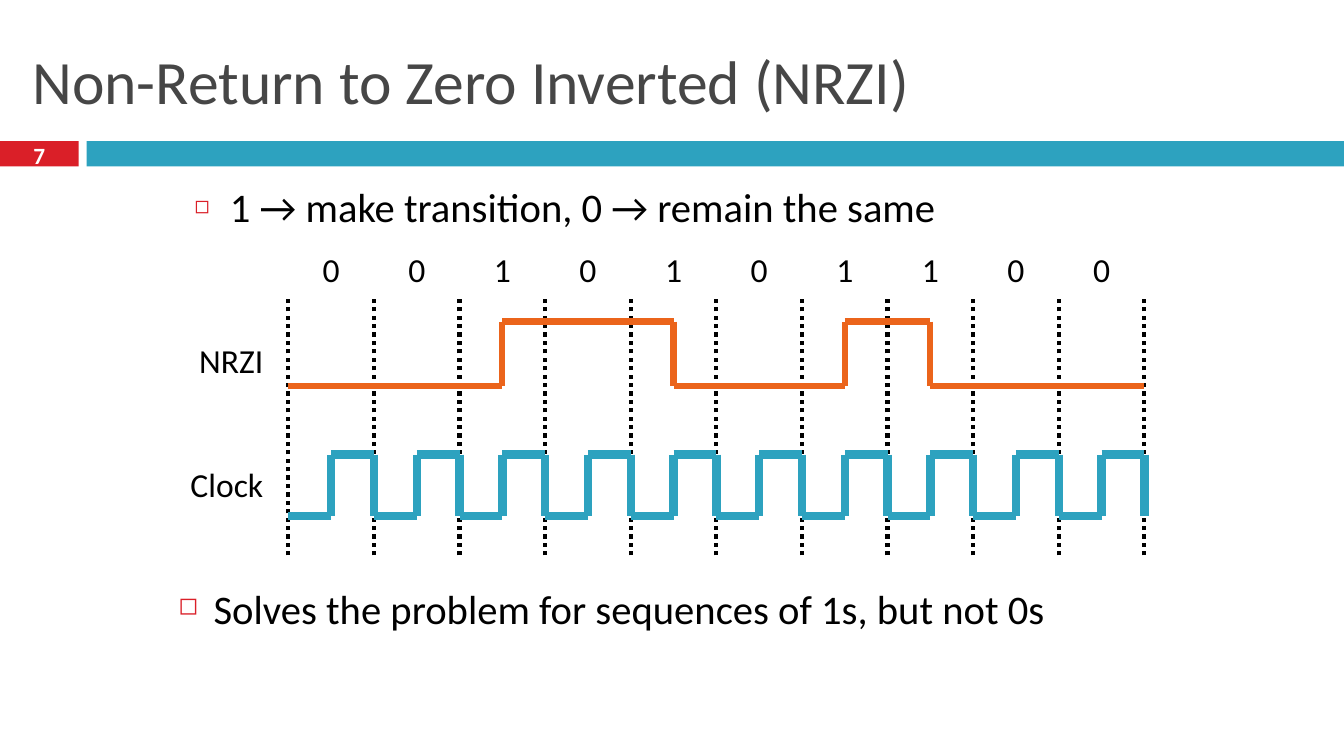
"""Build a slide that explains NRZI line coding with a timing diagram."""
from dataclasses import dataclass

from lxml import etree
from pptx import Presentation
from pptx.dml.color import RGBColor
from pptx.enum.dml import MSO_LINE
from pptx.enum.shapes import MSO_CONNECTOR, MSO_SHAPE
from pptx.enum.text import MSO_ANCHOR, MSO_AUTO_SIZE, PP_ALIGN
from pptx.oxml.ns import qn
from pptx.util import Inches, Pt

TITLE = "Non-Return to Zero Inverted (NRZI)"
SLIDE_NUMBER = "7"
RULE = "1 → make transition, 0 → remain the same"
CONCLUSION = "Solves the problem for sequences of 1s, but not 0s"
BITS = "0010101100"
SIGNAL_LABELS = [("NRZI", 3.32), ("Clock", 4.55)]

TITLE_BOX = (0.22, 0.25, 12.89, 1.08)
NUMBER_BAND = (0, 1.4, 0.78, 0.25)
HEADER_BAND = (0.86, 1.4, 12.47, 0.25)
NUMBER_BOX = (0, 1.37, 0.78, 0.33)
RULE_BOX = (1.83, 1.75, 9.67, 0.67)
CONCLUSION_BOX = (1.67, 5.74, 10, 0.67)

DIAGRAM_LEFT, DIAGRAM_RIGHT = 2.86, 11.35
GRID_TOP, GRID_BOTTOM = 2.93, 5.51
NRZI_HIGH, NRZI_LOW = 3.19, 3.83
CLOCK_HIGH, CLOCK_LOW = 4.51, 5.12
BIT_TOP, BIT_WIDTH = 2.42, 0.39
LABEL_LEFT, LABEL_WIDTH = 1.78, 0.93
LABEL_HEIGHT = 0.5
PERIOD = (DIAGRAM_RIGHT - DIAGRAM_LEFT) / len(BITS)

LEFT, CENTER, RIGHT = PP_ALIGN.LEFT, PP_ALIGN.CENTER, PP_ALIGN.RIGHT
TOP, MIDDLE = MSO_ANCHOR.TOP, MSO_ANCHOR.MIDDLE


@dataclass(frozen=True)
class Theme:
    """Hold the font, colours, type sizes and line widths."""
    font: str = "Calibri"
    title: str = "464646"
    text: str = "000000"
    white: str = "FFFFFF"
    red: str = "DA1F28"
    teal: str = "2DA2BF"
    orange: str = "EB641B"
    title_size: float = 44
    bullet_size: float = 29
    label_size: float = 24
    number_size: float = 16.6
    grid_width: float = 3
    nrzi_width: float = 4.5
    clock_width: float = 6


THEME = Theme()


def place(shape, box):
    """Move and size a shape to a box in inches."""
    shape.left, shape.top, shape.width, shape.height = map(Inches, box)


def write(shape, text, size, color, align=LEFT, anchor=TOP, wrap=True):
    """Write one formatted paragraph into a shape and return it."""
    frame = shape.text_frame
    frame.text = text
    frame.word_wrap = wrap
    frame.auto_size = MSO_AUTO_SIZE.NONE
    frame.vertical_anchor = anchor
    paragraph = frame.paragraphs[0]
    paragraph.alignment = align
    paragraph.font.name = THEME.font
    paragraph.font.size = Pt(size)
    paragraph.font.color.rgb = RGBColor.from_string(color)
    return paragraph


def add_text(slide, box, *args, **options):
    """Add a text box with one paragraph."""
    return write(slide.shapes.add_textbox(*map(Inches, box)), *args, **options)


def add_bullet(paragraph):
    """Give a paragraph a hanging red square bullet."""
    paragraph.space_before = Pt(7)
    properties = paragraph._p.get_or_add_pPr()
    properties.set("marL", str(Inches(0.35)))
    properties.set("indent", str(Inches(-0.35)))
    color = etree.SubElement(properties, qn("a:buClr"))
    etree.SubElement(color, qn("a:srgbClr"), val=THEME.red)
    etree.SubElement(properties, qn("a:buSzPct"), val="60000")
    etree.SubElement(properties, qn("a:buChar"), char="◻")


def add_band(slide, box, color):
    """Add a plain filled rectangle."""
    band = slide.shapes.add_shape(MSO_SHAPE.RECTANGLE, *map(Inches, box))
    band.shadow.inherit = False
    band.fill.solid()
    band.fill.fore_color.rgb = RGBColor.from_string(color)
    band.line.fill.background()


def add_line(slide, start, end, color, width, dash=None):
    """Add a straight line without a shadow."""
    line = slide.shapes.add_connector(MSO_CONNECTOR.STRAIGHT, *map(Inches, start + end))
    line.line.color.rgb = RGBColor.from_string(color)
    line.line.width = Pt(width)
    if dash:
        line.line.dash_style = dash
    etree.SubElement(line._element.spPr, qn("a:effectLst"))


def add_wave(slide, points, color, width):
    """Join consecutive points with lines."""
    for start, end in zip(points, points[1:]):
        add_line(slide, start, end, color, width)


def nrzi_points():
    """Return the corners of a signal that flips in the middle of each 1."""
    level, other = NRZI_LOW, NRZI_HIGH
    points = [(DIAGRAM_LEFT, level)]
    for index, bit in enumerate(BITS):
        if bit == "1":
            middle = DIAGRAM_LEFT + (index + 0.5) * PERIOD
            points += [(middle, level), (middle, other)]
            level, other = other, level
    return points + [(DIAGRAM_RIGHT, level)]


def clock_points():
    """Return the corners of a clock that is low, then high, in each period."""
    points = [(DIAGRAM_LEFT, CLOCK_LOW)]
    for index in range(len(BITS)):
        middle = DIAGRAM_LEFT + (index + 0.5) * PERIOD
        end = middle + PERIOD / 2
        points += [(middle, CLOCK_LOW), (middle, CLOCK_HIGH),
                   (end, CLOCK_HIGH), (end, CLOCK_LOW)]
    return points


def add_diagram(slide):
    """Draw the grid, both signals and their labels."""
    for index in range(len(BITS) + 1):
        x = DIAGRAM_LEFT + index * PERIOD
        add_line(slide, (x, GRID_BOTTOM), (x, GRID_TOP), THEME.text,
                 THEME.grid_width, MSO_LINE.ROUND_DOT)
    add_wave(slide, clock_points(), THEME.teal, THEME.clock_width)
    add_wave(slide, nrzi_points(), THEME.orange, THEME.nrzi_width)
    for label, top in SIGNAL_LABELS:
        add_text(slide, (LABEL_LEFT, top, LABEL_WIDTH, LABEL_HEIGHT), label,
                 THEME.label_size, THEME.text, RIGHT, wrap=False)
    for index, bit in enumerate(BITS):
        left = DIAGRAM_LEFT + (index + 0.5) * PERIOD - BIT_WIDTH / 2
        add_text(slide, (left, BIT_TOP, BIT_WIDTH, LABEL_HEIGHT), bit,
                 THEME.label_size, THEME.text, CENTER, wrap=False)


def main():
    """Build and save the presentation."""
    presentation = Presentation()
    presentation.slide_width = Inches(13.33)
    presentation.slide_height = Inches(7.5)
    slide = presentation.slides.add_slide(presentation.slide_layouts[1])
    title, body = slide.shapes.title, slide.placeholders[1]

    place(title, TITLE_BOX)
    write(title, TITLE, THEME.title_size, THEME.title, anchor=MIDDLE)
    add_band(slide, NUMBER_BAND, THEME.red)
    add_band(slide, HEADER_BAND, THEME.teal)
    number = add_text(slide, NUMBER_BOX, SLIDE_NUMBER, THEME.number_size,
                      THEME.white, CENTER, MIDDLE)
    number.font.bold = True

    place(body, RULE_BOX)
    add_bullet(write(body, RULE, THEME.bullet_size, THEME.text))
    add_diagram(slide)
    add_bullet(add_text(slide, CONCLUSION_BOX, CONCLUSION, THEME.bullet_size, THEME.text))
    presentation.save("out.pptx")


if __name__ == "__main__":
    main()
